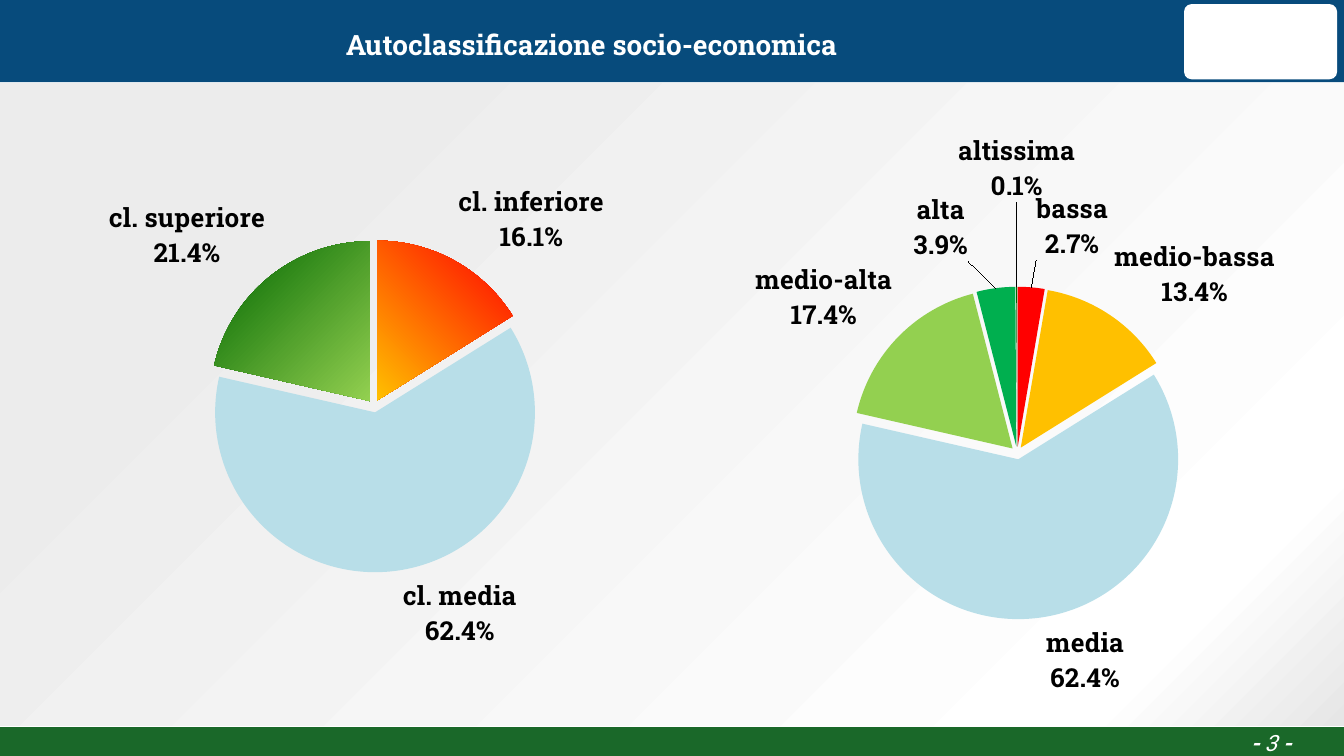
import copy

import pptx
import pptx.chart.data
import pptx.dml.color
import pptx.enum.chart
import pptx.enum.shapes
import pptx.enum.text
import pptx.oxml
import pptx.oxml.ns
import pptx.util

Pt = pptx.util.Pt
qn = pptx.oxml.ns.qn

COLORS = {
    "navy": "074B7C", "forest": "1A6829", "white": "FFFFFF", "black": "000000",
    "red": "FF0000", "amber": "FFC000", "sky": "B8DEE8", "lime": "93D050",
    "green": "00AF4F", "dark green": "006600",
}
BACKDROP_STOPS = {0: "E6E6E6", 13: "FFFFFF", 82: "ECECEC"}
SLAB = "Roboto Slab"


def rgb(name):
    return pptx.dml.color.RGBColor.from_string(COLORS[name])


def element(tag, content="", **attributes):
    """Make an XML element of the chart (c:) or drawing (a:) vocabulary."""
    values = "".join(f' {key}="{value}"' for key, value in attributes.items())
    return pptx.oxml.parse_xml(
        f'<{tag} {pptx.oxml.ns.nsdecls("a", "c")}{values}>{content}</{tag}>')


def manual_layout(**values):
    parts = "".join(f'<c:{key} val="{value}"/>' for key, value in values.items())
    return element("c:layout", f"<c:manualLayout>{parts}</c:manualLayout>")


def set_format(target, values):
    for key, value in values.items():
        setattr(target, key, value)


class SlideBuilder:
    def __init__(self, slide):
        self.slide = slide
        self.label_font = {"name": SLAB, "size": Pt(14), "bold": True}
        self.chart_font = {"name": "Calibri", "size": Pt(10)}

    def box(self, left, top, width, height, color, corner=None):
        kinds = pptx.enum.shapes.MSO_SHAPE
        kind = kinds.RECTANGLE if corner is None else kinds.ROUNDED_RECTANGLE
        shape = self.slide.shapes.add_shape(
            kind, Pt(left), Pt(top), Pt(width), Pt(height))
        shape.shadow.inherit = False
        shape.fill.solid()
        shape.fill.fore_color.rgb = rgb(color)
        shape.line.fill.background()
        if corner is not None:
            shape.adjustments[0] = corner
        return shape

    def backdrop(self, left, top, width, height):
        """Add a rectangle shaded in circles from its bottom right corner."""
        shape = self.box(left, top, width, height, "white")
        stops = "".join(
            f'<a:gs pos="{position * 1000}"><a:srgbClr val="{color}"/></a:gs>'
            for position, color in BACKDROP_STOPS.items())
        gradient = element(
            "a:gradFill",
            f"<a:gsLst>{stops}</a:gsLst>"
            '<a:path path="circle"><a:fillToRect l="100000" t="100000"/></a:path>'
            '<a:tileRect r="-100000" b="-100000"/>', rotWithShape="1")
        properties = shape.element.spPr
        properties.replace(properties.find(qn("a:solidFill")), gradient)

    def text(self, left, top, width, height, runs, font, margins=(7.2, 3.6), spacing=None):
        """Add a centred line; runs are pairs of wording and bold."""
        box = self.slide.shapes.add_textbox(Pt(left), Pt(top), Pt(width), Pt(height))
        side, end = map(Pt, margins)
        set_format(box.text_frame, {
            "word_wrap": True, "vertical_anchor": pptx.enum.text.MSO_ANCHOR.MIDDLE,
            "margin_left": side, "margin_right": side,
            "margin_top": end, "margin_bottom": end})
        paragraph = box.text_frame.paragraphs[0]
        set_format(paragraph, {
            "alignment": pptx.enum.text.PP_ALIGN.CENTER, "line_spacing": spacing})
        for wording, bold in runs:
            run = paragraph.add_run()
            run.text = wording
            set_format(run.font, {"name": SLAB, "bold": bold, **font})
            run.font.color.rgb = rgb("white")

    def pie(self, left, top, plot, slices, label_shifts):
        """Add an exploded pie; slices map a category to its value and fill.

        A fill is a colour, or two colours and an angle. Label shifts map a
        category to the offset of its label, as shares of the chart.
        """
        data = pptx.chart.data.CategoryChartData(number_format="0.0%")
        data.categories = list(slices)
        data.add_series("Series 1", [value for value, _ in slices.values()])
        chart = self.slide.shapes.add_chart(
            pptx.enum.chart.XL_CHART_TYPE.PIE,
            Pt(left), Pt(top), Pt(718), Pt(342), data).chart
        set_format(chart, {"has_legend": False, "has_title": False})
        set_format(chart.font, self.chart_font)
        chart.font.color.rgb = rgb("black")
        chart.plots[0].vary_by_categories = True

        chart_space = chart.element
        chart_space.find(qn("c:chart")).addnext(
            element("c:spPr", "<a:noFill/><a:ln><a:noFill/></a:ln>"))
        plot_area = chart_space.find(f'.//{qn("c:plotArea")}')
        for automatic in plot_area.findall(qn("c:layout")):
            plot_area.remove(automatic)
        x, y, width, height = plot
        plot_area.insert(0, manual_layout(
            layoutTarget="inner", xMode="edge", yMode="edge", x=x, y=y, w=width, h=height))

        series = chart.plots[0].series[0]
        series_xml = chart_space.find(f'.//{qn("c:ser")}')
        series_xml.find(qn("c:tx")).addnext(element("c:explosion", val=4))
        for index, (_, color) in enumerate(slices.values()):
            fill = series.points[index].format.fill
            if isinstance(color, str):
                fill.solid()
                fill.fore_color.rgb = rgb(color)
            else:
                *ends, angle = color
                fill.gradient()
                fill.gradient_angle = angle
                for stop, end in zip(fill.gradient_stops, ends):
                    stop.color.rgb = rgb(end)
        self.label_slices(series, series_xml, list(slices), label_shifts)

    def label_slices(self, series, series_xml, categories, shifts):
        labels = series.data_labels
        set_format(labels, {
            "show_value": True, "show_category_name": True,
            "number_format": "0.0%", "number_format_is_linked": False,
            "position": pptx.enum.chart.XL_LABEL_POSITION.OUTSIDE_END})
        set_format(labels.font, self.label_font)
        labels.font.color.rgb = rgb("black")
        labels_xml = series_xml.find(qn("c:dLbls"))
        labels_xml.find(qn("c:showBubbleSize")).addnext(element("c:separator", "\n"))
        shared = [part for part in labels_xml if part.tag != qn("c:showLeaderLines")]
        for order, category in enumerate(name for name in categories if name in shifts):
            x, y = shifts[category]
            label = element("c:dLbl")
            label.append(element("c:idx", val=categories.index(category)))
            label.append(manual_layout(x=x, y=y))
            label.extend(copy.deepcopy(shared))
            labels_xml.insert(order, label)


def main():
    presentation = pptx.Presentation()
    set_format(presentation, {"slide_width": Pt(720), "slide_height": Pt(405)})
    builder = SlideBuilder(presentation.slides.add_slide(presentation.slide_layouts[6]))

    builder.backdrop(0, 44.6, 720, 344.2)
    builder.box(0, 0, 720, 44, "navy")
    builder.box(0, 389.5, 720, 15.5, "forest")
    builder.box(634.3, 2.2, 82, 40.3, "white", corner=0.1)
    builder.text(643.7, 391.7, 74.2, 12.2, [("- ", True), ("3", False), (" -", True)],
                 {"size": Pt(12), "italic": True}, margins=(2.9, 2.9))
    builder.text(5, 1.4, 624.2, 42.5, [("Autoclassificazione socio-economica", True)],
                 {"size": Pt(15)}, spacing=Pt(20))

    builder.pie(2.2, 45.4, (0.016, 0.243, 0.52, 0.521), {
        "cl. inferiore": (0.161, ("red", "amber", 225)),
        "cl. media": (0.624, "sky"),
        "cl. superiore": (0.214, ("dark green", "lime", 315)),
    }, {})
    builder.pie(13.7, 57.6, (0.48, 0.281, 0.52, 0.521), {
        "bassa": (0.027, "red"),
        "medio-bassa": (0.134, "amber"),
        "media": (0.624, "sky"),
        "medio-alta": (0.174, "lime"),
        "alta": (0.039, "green"),
        "altissima": (0.001, "dark green"),
    }, {"bassa": (0.03, -0.03), "alta": (-0.02, -0.03), "altissima": (0, -0.12)})

    presentation.save("out.pptx")


if __name__ == "__main__":
    main()
